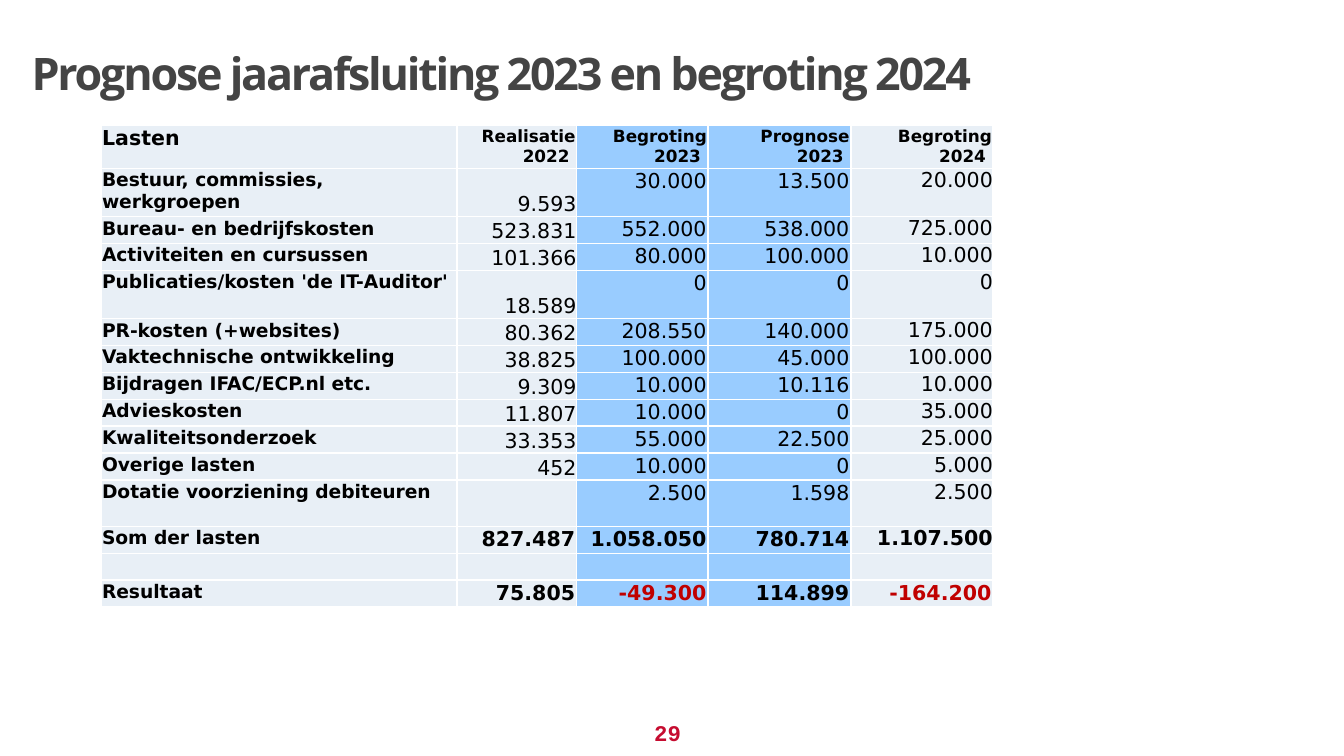
from lxml.etree import SubElement
from pptx import Presentation
from pptx.dml.color import RGBColor
from pptx.enum.text import MSO_ANCHOR as Anchor, PP_ALIGN as Align
from pptx.oxml.ns import qn
from pptx.util import Pt

COLORS = {
    "title": "444444", "number": "C60C30", "text": "000000", "loss": "C00000",
    "plain": "E8EFF6", "accent": "99CCFF", "border": "FFFFFF",
}
TITLE = "Prognose jaarafsluiting 2023 en begroting 2024"
PAGE_NUMBER = "29"
ROWS = [
    ("Lasten", "Realisatie 2022 ", "Begroting 2023 ", "Prognose 2023 ", "Begroting 2024 "),
    ("Bestuur, commissies, werkgroepen", "9.593", "30.000", "13.500", "20.000"),
    ("Bureau- en bedrijfskosten", "523.831", "552.000", "538.000", "725.000"),
    ("Activiteiten en cursussen ", "101.366", "80.000", "100.000", "10.000"),
    ("Publicaties/kosten 'de IT-Auditor'", "18.589", "0", "0", "0"),
    ("PR-kosten (+websites)", "80.362", "208.550", "140.000", "175.000"),
    ("Vaktechnische ontwikkeling", "38.825", "100.000", "45.000", "100.000"),
    ("Bijdragen IFAC/ECP.nl etc.", "9.309", "10.000", "10.116", "10.000"),
    ("Advieskosten", "11.807", "10.000", "0", "35.000"),
    ("Kwaliteitsonderzoek ", "33.353", "55.000", "22.500", "25.000"),
    ("Overige lasten", "452", "10.000", "0", "5.000"),
    ("Dotatie voorziening debiteuren", "", "2.500", "1.598", "2.500"),
    ("Som der lasten", "827.487", "1.058.050", "780.714", "1.107.500"),
    ("", "", "", "", ""),
    ("Resultaat", "75.805", "-49.300", "114.899", "-164.200"),
]
COLUMN_WIDTHS = [190.8, 64.1, 70.4, 76.5, 76.2]
ROW_HEIGHT = 14.45
TALL_ROWS = {0: 23, 1: 25.8, 4: 25.8, 11: 24.8}
ACCENT_COLUMNS = (2, 3)
TOTALS_START = 12


def color(name):
    return RGBColor.from_string(COLORS[name])


def add_span(para, text, size, font_name, color_name, bold=True):
    span = para.add_run()
    span.text = text
    span.font.size = Pt(size)
    span.font.name = font_name
    span.font.bold = bold
    span.font.color.rgb = color(color_name)
    return span


def add_text_box(page, place, insets, text, size, font_name, color_name):
    box = page.shapes.add_textbox(*map(Pt, place))
    frame = box.text_frame
    frame.word_wrap = True
    frame.margin_left = frame.margin_right = Pt(insets[0])
    frame.margin_top = frame.margin_bottom = Pt(insets[1])
    return add_span(frame.paragraphs[0], text, size, font_name, color_name)


def add_borders(cell):
    """Put the borders ahead of the fill, as the schema asks."""
    props = cell._tc.get_or_add_tcPr()
    for index, side in enumerate(("lnL", "lnR", "lnT", "lnB")):
        line = SubElement(props, qn(f"a:{side}"), w=str(Pt(1)))
        fill = SubElement(line, qn("a:solidFill"))
        SubElement(fill, qn("a:srgbClr"), val=COLORS["border"])
        props.insert(index, line)


def text_size(row, column):
    if row == 0:
        return 9 if column else 11
    return 11 if column else 10


def fill_cell(cell, text, row, column):
    cell.fill.solid()
    cell.fill.fore_color.rgb = color("accent" if column in ACCENT_COLUMNS else "plain")
    add_borders(cell)

    is_amount = column > 0 and 0 < row < TOTALS_START
    at_bottom = is_amount and column == 1
    is_flush = at_bottom or (column == 4 and 0 < row <= TOTALS_START)
    cell.margin_left = cell.margin_right = cell.margin_top = Pt(0 if is_flush else 0.7)
    cell.margin_bottom = Pt(0)
    cell.vertical_anchor = Anchor.BOTTOM if at_bottom else Anchor.TOP

    para = cell.text_frame.paragraphs[0]
    para.alignment = Align.RIGHT if column else Align.LEFT
    size = text_size(row, column)
    if text:
        color_name = "loss" if text.startswith("-") else "text"
        add_span(para, text, size, "DejaVu Sans", color_name, not is_amount)
    else:
        SubElement(para._p, qn("a:endParaRPr"), sz=str(size * 100))


def add_cost_table(page):
    heights = [TALL_ROWS.get(row, ROW_HEIGHT) for row in range(len(ROWS))]
    frame = page.shapes.add_table(
        len(ROWS), len(COLUMN_WIDTHS), Pt(54), Pt(67.2),
        Pt(sum(COLUMN_WIDTHS)), Pt(sum(heights)))
    table = frame.table
    table.horz_banding = False
    for column, width in enumerate(COLUMN_WIDTHS):
        table.columns[column].width = Pt(width)
    for row, texts in enumerate(ROWS):
        table.rows[row].height = Pt(heights[row])
        for column, text in enumerate(texts):
            fill_cell(table.cell(row, column), text, row, column)


def main():
    deck = Presentation()
    deck.slide_width, deck.slide_height = Pt(720), Pt(405)
    page = deck.slides.add_slide(deck.slide_layouts[6])

    add_text_box(page, (343.4, 381.6, 33.1, 17.3), (7.2, 3.6),
                 PAGE_NUMBER, 12, "Courier New", "number")
    title = add_text_box(page, (11.5, 22.3, 689, 44.6), (5.4, 2),
                         TITLE, 24, "Open Sans", "title")
    title.font._element.set("spc", "-120")
    add_cost_table(page)
    deck.save("out.pptx")


if __name__ == "__main__":
    main()
